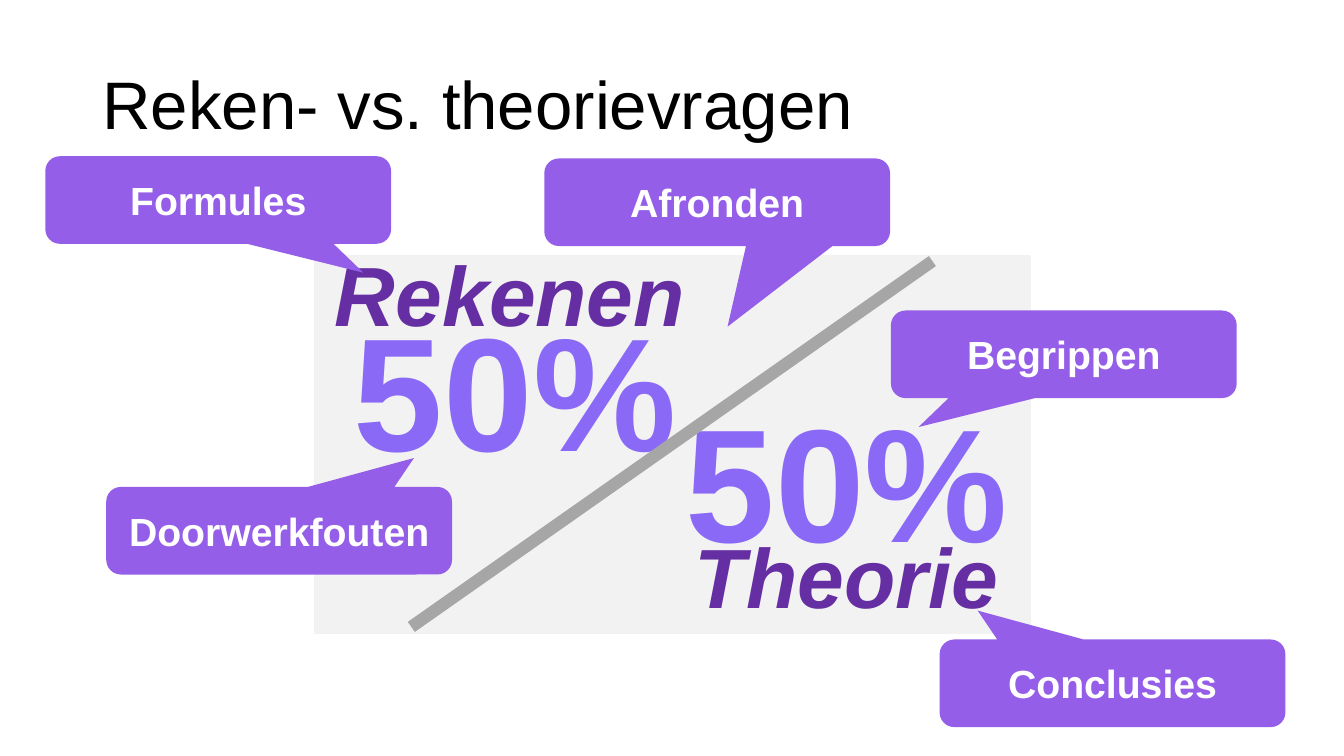
from pptx import Presentation
from pptx.dml.color import RGBColor
from pptx.enum.shapes import MSO_CONNECTOR, MSO_SHAPE
from pptx.enum.text import MSO_ANCHOR, PP_ALIGN
from pptx.oxml.ns import qn
from pptx.util import Pt
from lxml.etree import SubElement


def color(code):
    return RGBColor.from_string(code)


def write(frame, text, size=28, code="FFFFFF", bold=True, italic=False,
          align=PP_ALIGN.CENTER, anchor=MSO_ANCHOR.MIDDLE, space=1.0):
    frame.word_wrap = True
    frame.vertical_anchor = anchor
    para = frame.paragraphs[0]
    para.alignment = align
    para.line_spacing = space
    run = para.add_run()
    run.text = text
    font = run.font
    font.name, font.size = "Arial", Pt(size)
    font.bold, font.italic = bold, italic
    font.color.rgb = color(code)


deck = Presentation()
deck.slide_width, deck.slide_height = Pt(960), Pt(540)
slide = deck.slides.add_slide(deck.slide_layouts[5])
shapes = slide.shapes

# Title
title = shapes.title
title.left, title.top, title.width, title.height = Pt(66), Pt(28.8), Pt(828), Pt(78)
write(title.text_frame, "Reken- vs. theorievragen", size=48, code="000000",
      bold=False, align=PP_ALIGN.LEFT, anchor=MSO_ANCHOR.BOTTOM, space=0.9)

# Grey panel
panel = shapes.add_shape(MSO_SHAPE.RECTANGLE, Pt(224.6), Pt(182.9), Pt(511.2), Pt(269.3))
panel.shadow.inherit = False
panel.fill.solid()
panel.fill.fore_color.rgb = color("F2F2F2")
panel.line.color.rgb = color("F2F2F2")
panel.line.width = Pt(1)

# Shares and their names
share = dict(size=115, code="8A69F7")
name = dict(size=60, code="652EA3", italic=True)
for text, left, top, width, height, style in [
    ("50%", 234, 203.8, 267.8, 146.9, share),
    ("Rekenen", 226.8, 169.9, 275, 79.9, name),
    ("50%", 470.9, 269.3, 267.8, 146.9, share),
    ("Theorie", 467.3, 370.8, 275, 79.9, name),
]:
    box = shapes.add_textbox(Pt(left), Pt(top), Pt(width), Pt(height))
    write(box.text_frame, text, anchor=MSO_ANCHOR.TOP, **style)

# Dividing line
split = shapes.add_connector(MSO_CONNECTOR.STRAIGHT, Pt(666), Pt(186.5), Pt(293.8), Pt(447.8))
split.line.color.rgb = color("A6A6A6")
split.line.width = Pt(8.75)
SubElement(split._element.spPr, qn("a:effectLst"))

# Callouts: text, left, top, tip offset from the centre
for text, left, top, tip_x, tip_y in [
    ("Doorwerkfouten", 75.9, 347.8, 0.39, -0.83),
    ("Formules", 32.4, 111.6, 0.42, 0.83),
    ("Conclusies", 671.2, 456.8, -0.39, -0.83),
    ("Begrippen", 636.4, 221.8, -0.42, 0.83),
    ("Afronden", 388.8, 113.2, 0.03, 1.42),
]:
    call = shapes.add_shape(MSO_SHAPE.ROUNDED_RECTANGULAR_CALLOUT,
                            Pt(left), Pt(top), Pt(247), Pt(62.6))
    call.adjustments[0], call.adjustments[1] = tip_x, tip_y
    call.shadow.inherit = False
    call.fill.solid()
    call.fill.fore_color.rgb = color("945EE8")
    call.line.fill.background()
    write(call.text_frame, text)

deck.save("out.pptx")
